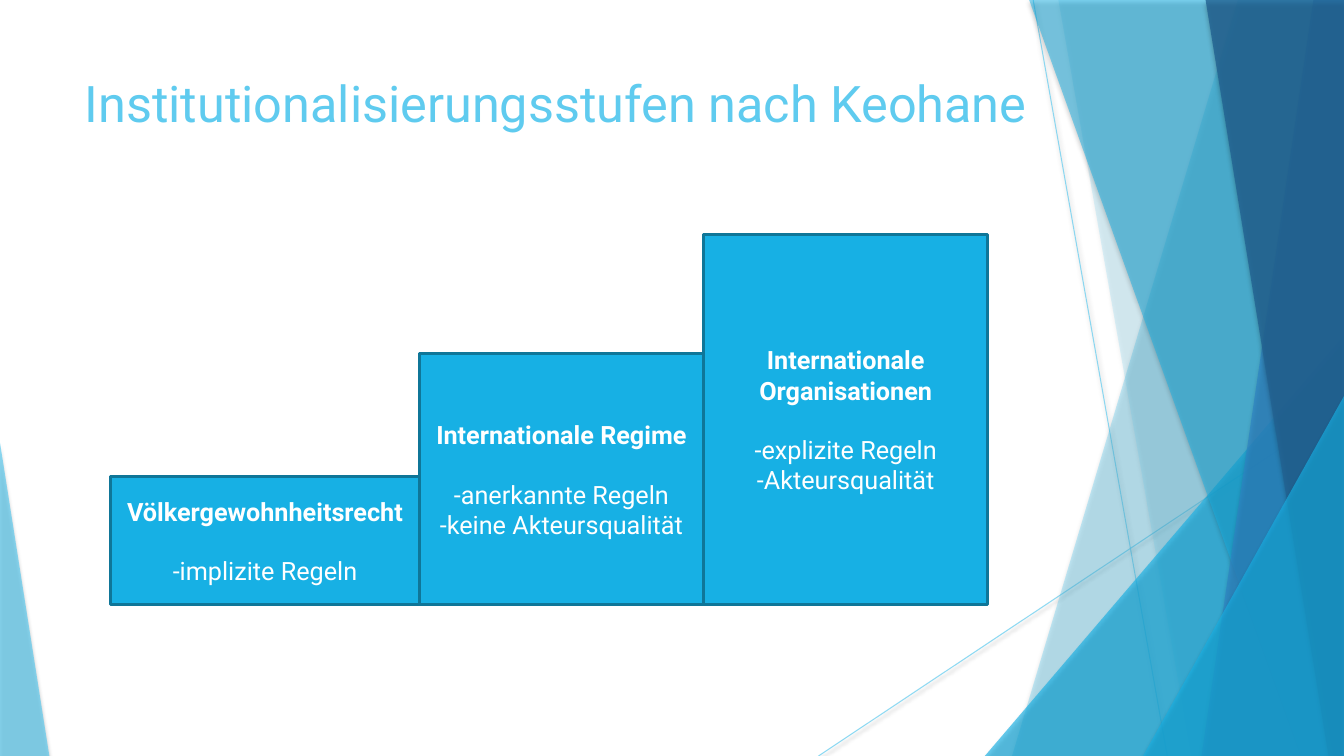
import pptx
import pptx.dml.color
import pptx.enum.shapes
import pptx.enum.text
import pptx.oxml
import pptx.oxml.ns
import pptx.util
import lxml.etree

COLUMNS, ROWS = 80, 45
SKY, BLUE, STEEL, NAVY, EDGE, WHITE = "5FCBEF", "17B0E4", "2E83C3", "226292", "0F7698", "FFFFFF"


def color(value):
    return pptx.dml.color.RGBColor.from_string(value)


class SlideBuilder:
    font = "Roboto"

    def __init__(self, presentation):
        self.slide = presentation.slides.add_slide(presentation.slide_layouts[5])
        self.column = presentation.slide_width / COLUMNS
        self.row = presentation.slide_height / ROWS

    def x(self, columns):
        return round(columns * self.column)

    def y(self, rows):
        return round(rows * self.row)

    def frame(self, left, top, width, height):
        return self.x(left), self.y(top), self.x(width), self.y(height)

    def style_paragraph(self, paragraph, size, value, alignment):
        paragraph.alignment = alignment
        paragraph.font.name = self.font
        paragraph.font.size = pptx.util.Pt(size)
        paragraph.font.color.rgb = color(value)

    def add_effects(self, shape, opacity, shadow_opacity, blur, distance):
        """Make the painted colors translucent, then add a downward shadow."""
        properties = shape.element.spPr
        for painted in properties.iter(pptx.oxml.ns.qn("a:srgbClr")):
            alpha = lxml.etree.SubElement(painted, pptx.oxml.ns.qn("a:alpha"))
            alpha.set("val", str(opacity * 1000))
        properties.append(pptx.oxml.parse_xml(
            f'<a:effectLst {pptx.oxml.ns.nsdecls("a")}>'
            f'<a:outerShdw blurRad="{pptx.util.Pt(blur)}" dist="{pptx.util.Pt(distance)}" '
            'dir="5400000" rotWithShape="0"><a:srgbClr val="000000">'
            f'<a:alpha val="{shadow_opacity * 1000}"/></a:srgbClr></a:outerShdw></a:effectLst>'))

    def line(self, start, end):
        connector = self.slide.shapes.add_connector(
            pptx.enum.shapes.MSO_CONNECTOR.STRAIGHT,
            self.x(start[0]), self.y(start[1]), self.x(end[0]), self.y(end[1]))
        connector.line.color.rgb = color(SKY)
        connector.line.width = pptx.util.Pt(0.75)
        self.add_effects(connector, 70, 38, 3.1, 1.6)

    def paint_facet(self, shape, fill, opacity):
        shape.fill.solid()
        shape.fill.fore_color.rgb = color(fill)
        shape.line.fill.background()
        self.add_effects(shape, opacity, 35, 3, 2)

    def band(self, top_left, bottom_left, fill, opacity):
        """A full-height facet that ends at the right edge of the slide."""
        builder = self.slide.shapes.build_freeform(self.x(top_left), 0)
        builder.add_line_segments([
            (self.x(COLUMNS), 0), (self.x(COLUMNS), self.y(ROWS)),
            (self.x(bottom_left), self.y(ROWS))], close=True)
        self.paint_facet(builder.convert_to_shape(), fill, opacity)

    def triangle(self, left, top, width, apex, fill, opacity):
        """A facet that stands on the bottom edge of the slide."""
        shape = self.slide.shapes.add_shape(
            pptx.enum.shapes.MSO_SHAPE.ISOSCELES_TRIANGLE,
            *self.frame(left, top, width, ROWS - top))
        shape.adjustments[0] = apex
        self.paint_facet(shape, fill, opacity)

    def title(self, text, left, top, width, height):
        shape = self.slide.shapes.title
        shape.left, shape.top, shape.width, shape.height = self.frame(left, top, width, height)
        text_frame = shape.text_frame
        text_frame.text = text
        text_frame.word_wrap = True
        text_frame.auto_size = pptx.enum.text.MSO_AUTO_SIZE.NONE
        text_frame.vertical_anchor = pptx.enum.text.MSO_ANCHOR.TOP
        self.style_paragraph(text_frame.paragraphs[0], 36, SKY, pptx.enum.text.PP_ALIGN.LEFT)

    def step(self, left, top, right, bottom, heading, features):
        shape = self.slide.shapes.add_shape(
            pptx.enum.shapes.MSO_SHAPE.RECTANGLE,
            *self.frame(left, top, right - left, bottom - top))
        shape.shadow.inherit = False
        shape.fill.solid()
        shape.fill.fore_color.rgb = color(BLUE)
        shape.line.color.rgb = color(EDGE)
        shape.line.width = pptx.util.Pt(2)
        text_frame = shape.text_frame
        text_frame.word_wrap = True
        text_frame.vertical_anchor = pptx.enum.text.MSO_ANCHOR.MIDDLE
        text_frame.text = "\n".join([heading, *features])
        for index, paragraph in enumerate(text_frame.paragraphs):
            self.style_paragraph(paragraph, 18, WHITE, pptx.enum.text.PP_ALIGN.CENTER)
            paragraph.font.bold = index == 0
            if index == 1:
                paragraph.space_before = pptx.util.Pt(21)


def main():
    presentation = pptx.Presentation()
    presentation.slide_width = pptx.util.Inches(13.33)
    presentation.slide_height = pptx.util.Inches(7.5)
    builder = SlideBuilder(presentation)

    # Facets along the slide edges
    builder.line((61.5, 0), (69.48, ROWS))
    builder.line((COLUMNS, 24.18), (48.72, ROWS))
    builder.band(73.68, 60.24, SKY, 36)
    builder.band(63, 70.92, SKY, 20)
    builder.triangle(58.62, 19.98, 21.38, 1, BLUE, 66)
    builder.band(61.26, 77.46, BLUE, 50)
    builder.band(78.18, 71.52, STEEL, 70)
    builder.band(71.76, 79.08, NAVY, 80)
    builder.triangle(68.04, 23.58, 11.96, 1, BLUE, 66)
    builder.triangle(0, 26.34, 2.94, 0, SKY, 70)

    # Title
    builder.title("Institutionalisierungsstufen nach Keohane", 4.44, 4.02, 62, 8.64)

    # Staircase: each step starts where the one before ends
    edges = [6.6, 24.96, 41.88, 58.8]
    steps = [
        (28.38, "Völkergewohnheitsrecht", ["-implizite Regeln"]),
        (21.06, "Internationale Regime", ["-anerkannte Regeln", "-keine Akteursqualität"]),
        (13.98, "Internationale Organisationen", ["-explizite Regeln", "-Akteursqualität"]),
    ]
    for left, right, (top, heading, features) in zip(edges, edges[1:], steps):
        builder.step(left, top, right, 36, heading, features)

    presentation.save("out.pptx")


if __name__ == "__main__":
    main()
